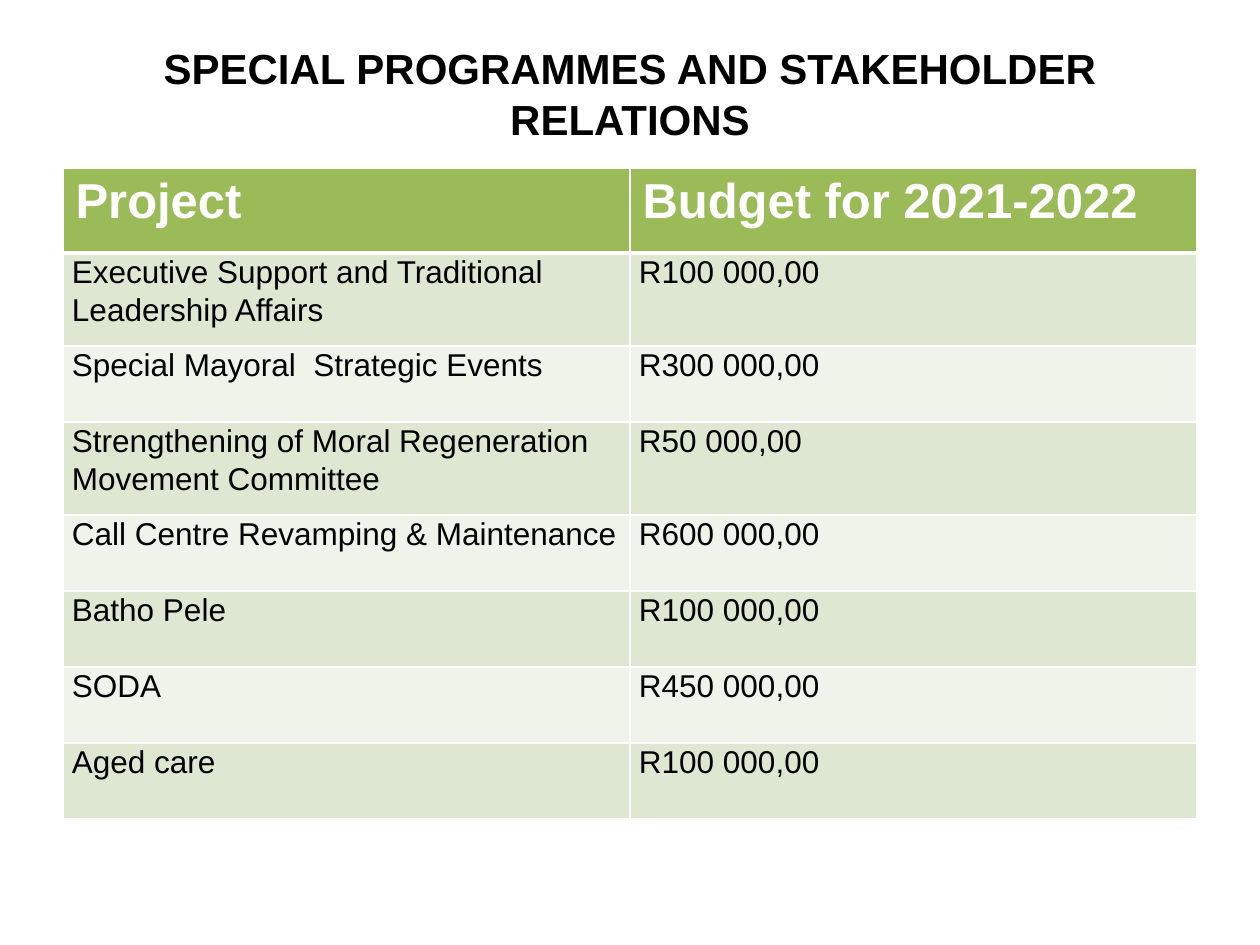
from lxml import etree
from pptx import Presentation
from pptx.dml.color import RGBColor
from pptx.enum.text import MSO_ANCHOR, PP_ALIGN
from pptx.oxml.ns import qn
from pptx.util import Pt

PX = 914400 / 126
FONT = "Arial"
BLACK = RGBColor(0x00, 0x00, 0x00)
WHITE = RGBColor(0xFF, 0xFF, 0xFF)
HEADER_GREEN = RGBColor(0x9B, 0xBB, 0x59)
BAND_DARK = RGBColor(0xDE, 0xE7, 0xD1)
BAND_LIGHT = RGBColor(0xEF, 0xF3, 0xEA)
CENTER, LEFT = PP_ALIGN.CENTER, PP_ALIGN.LEFT
MIDDLE = MSO_ANCHOR.MIDDLE

HEADINGS = ("Project", "Budget for 2021-2022")
BUDGETS = [
    ("Executive Support and Traditional Leadership Affairs", "R100 000,00"),
    ("Special Mayoral  Strategic Events", "R300 000,00"),
    ("Strengthening of Moral Regeneration Movement Committee", "R50 000,00"),
    ("Call Centre Revamping & Maintenance", "R600 000,00"),
    ("Batho Pele", "R100 000,00"),
    ("SODA", "R450 000,00"),
    ("Aged care", "R100 000,00"),
]
ROW_HEIGHTS = (85, 93, 76, 93, 76, 76, 76, 76)


def px(length):
    return round(length * PX)


def write(frame, text, *, size, color=BLACK, bold=False, align=LEFT, spacing=None):
    frame.word_wrap = True
    paragraph = frame.paragraphs[0]
    paragraph.alignment = align
    if spacing:
        paragraph.line_spacing = spacing
    run = paragraph.add_run()
    run.text = text
    run.font.name = FONT
    run.font.size = Pt(size)
    run.font.bold = bold
    run.font.color.rgb = color


def set_borders(cell, top=1, bottom=1):
    """Give the cell white borders; widths are in points."""
    properties = cell._tc.get_or_add_tcPr()
    widths = {"a:lnL": 1, "a:lnR": 1, "a:lnT": top, "a:lnB": bottom}
    for position, (tag, width) in enumerate(widths.items()):
        line = etree.Element(qn(tag), w=str(Pt(width)))
        fill = etree.SubElement(line, qn("a:solidFill"))
        etree.SubElement(fill, qn("a:srgbClr"), val=str(WHITE))
        properties.insert(position, line)


def add_title(slide, left, top, width, height):
    title = slide.shapes.add_textbox(px(left), px(top), px(width), px(height))
    title.text_frame.vertical_anchor = MIDDLE
    write(title.text_frame, "SPECIAL PROGRAMMES AND STAKEHOLDER RELATIONS",
          size=24, bold=True, align=CENTER)


def fill_header_cell(cell, heading):
    cell.fill.solid()
    cell.fill.fore_color.rgb = HEADER_GREEN
    set_borders(cell, bottom=3)
    write(cell.text_frame, heading, size=28, color=WHITE, bold=True)


def fill_budget_cell(cell, entry, row):
    cell.fill.solid()
    cell.fill.fore_color.rgb = BAND_DARK if row % 2 else BAND_LIGHT
    set_borders(cell, top=3 if row == 1 else 1)
    cell.margin_left = cell.margin_right = px(9)
    cell.margin_top = cell.margin_bottom = 0
    write(cell.text_frame, entry, size=18, spacing=1.07)


def add_budget_table(slide, left, top, width):
    table = slide.shapes.add_table(
        len(ROW_HEIGHTS), len(HEADINGS),
        px(left), px(top), px(width), px(sum(ROW_HEIGHTS))).table
    for column in table.columns:
        column.width = px(width / len(HEADINGS))
    for row, height in zip(table.rows, ROW_HEIGHTS):
        row.height = px(height)
    for column, heading in enumerate(HEADINGS):
        fill_header_cell(table.cell(0, column), heading)
    for row, entries in enumerate(BUDGETS, start=1):
        for column, entry in enumerate(entries):
            fill_budget_cell(table.cell(row, column), entry, row)


def main():
    deck = Presentation()
    deck.slide_width, deck.slide_height = px(1260), px(945)
    slide = deck.slides.add_slide(deck.slide_layouts[6])
    add_title(slide, 63, 38, 1134, 110)
    add_budget_table(slide, 63, 168, 1134)
    deck.save("out.pptx")


if __name__ == "__main__":
    main()
